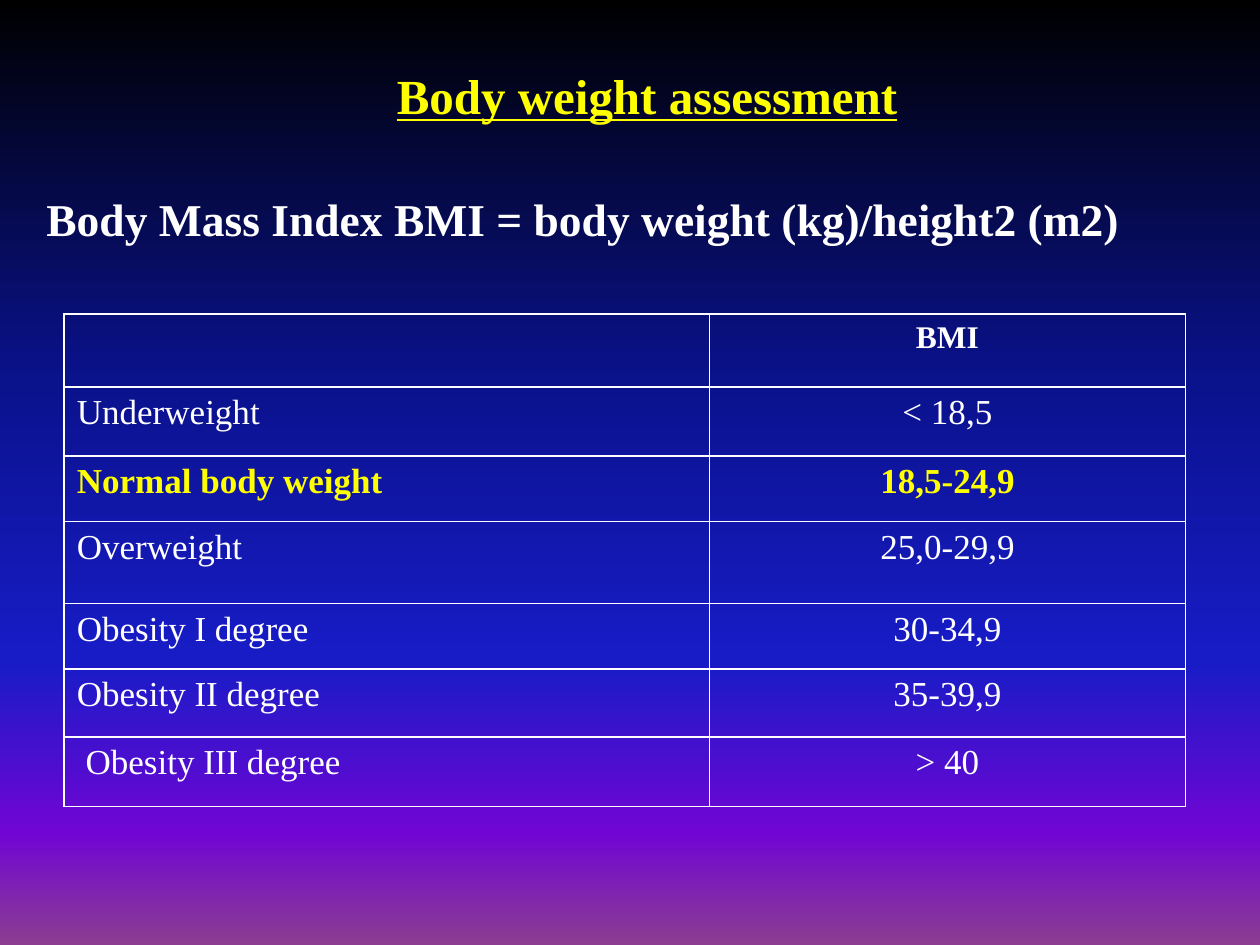
from dataclasses import dataclass

from lxml.etree import SubElement
from pptx import Presentation
from pptx.dml.color import RGBColor
from pptx.enum.text import MSO_ANCHOR as Anchor, PP_ALIGN as Align
from pptx.oxml.ns import qn
from pptx.util import Inches, Pt


@dataclass(frozen=True)
class Theme:
    font: str = "Times New Roman"
    text: str = "FFFFFF"
    accent: str = "FFFF00"
    title_size: int = 28
    formula_size: int = 26
    header_size: int = 18
    row_size: int = 20
    border_width: int = 1
    # position in percent, colour
    sky: tuple = ((0, "000000"), (40, "0A128C"), (70, "181CC7"),
                  (88, "7005D4"), (100, "8C3D91"))


theme = Theme()


def write(frame, text, size, color=theme.text, bold=False, align=Align.LEFT):
    paragraph = frame.paragraphs[0]
    paragraph.text = text
    paragraph.alignment = align
    font = paragraph.font
    font.name, font.size, font.bold = theme.font, Pt(size), bold
    font.color.rgb = RGBColor.from_string(color)
    return font


def add_solid_fill(parent, color):
    fill = SubElement(parent, qn("a:solidFill"))
    SubElement(fill, qn("a:srgbClr"), val=color)


deck = Presentation()
deck.slide_width, deck.slide_height = Inches(10), Inches(7.5)
slide = deck.slides.add_slide(deck.slide_layouts[6])

# Background: top-to-bottom gradient
background = slide.background.fill
background.gradient()
background.gradient_angle = 270
stops = slide.element.find(".//" + qn("a:gsLst"))
for default_stop in list(stops):
    stops.remove(default_stop)
for percent, color in theme.sky:
    stop = SubElement(stops, qn("a:gs"), pos=str(percent * 1000))
    SubElement(stop, qn("a:srgbClr"), val=color)

# Title and formula
left = Inches(0.27)
title = slide.shapes.add_textbox(
    left, Inches(0.28), deck.slide_width - left, Inches(0.95)).text_frame
title.word_wrap = True
title.vertical_anchor = Anchor.MIDDLE
title_font = write(title, "Body weight assessment", theme.title_size,
                   theme.accent, True, Align.CENTER)
title_font.underline = True

formula = slide.shapes.add_textbox(
    left, Inches(1.47), Inches(9.53), Inches(5.43)).text_frame
formula.word_wrap = True
write(formula, "Body Mass Index BMI = body weight (kg)/height2 (m2)",
      theme.formula_size, bold=True)

# BMI classes: label, range, row height
bmi_classes = [
    ("", "BMI", 0.58),
    ("Underweight", "< 18,5", 0.55),
    ("Normal body weight", "18,5-24,9", 0.52),
    ("Overweight", "25,0-29,9", 0.65),
    ("Obesity I degree", "30-34,9", 0.52),
    ("Obesity II degree", "35-39,9", 0.54),
    (" Obesity III degree", "> 40", 0.55),
]
column_widths = (5.12, 3.78)
table = slide.shapes.add_table(
    len(bmi_classes), len(column_widths), Inches(0.51), Inches(2.49),
    Inches(sum(column_widths)), Inches(sum(row[2] for row in bmi_classes))).table
table.first_row = table.horz_banding = False
for column, width in zip(table.columns, column_widths):
    column.width = Inches(width)

for r, (label, bmi_range, height) in enumerate(bmi_classes):
    table.rows[r].height = Inches(height)
    is_header, is_normal = r == 0, label.startswith("Normal")
    for c, (text, align) in enumerate(((label, Align.LEFT), (bmi_range, Align.CENTER))):
        cell = table.cell(r, c)
        write(cell.text_frame, text,
              theme.header_size if is_header else theme.row_size,
              theme.accent if is_normal else theme.text,
              is_header or is_normal, align)
        properties = cell._tc.get_or_add_tcPr()
        for side in ("lnL", "lnR", "lnT", "lnB"):
            border = SubElement(properties, qn("a:" + side),
                                w=str(Pt(theme.border_width)))
            add_solid_fill(border, theme.text)
        cell.fill.background()

deck.save("out.pptx")
